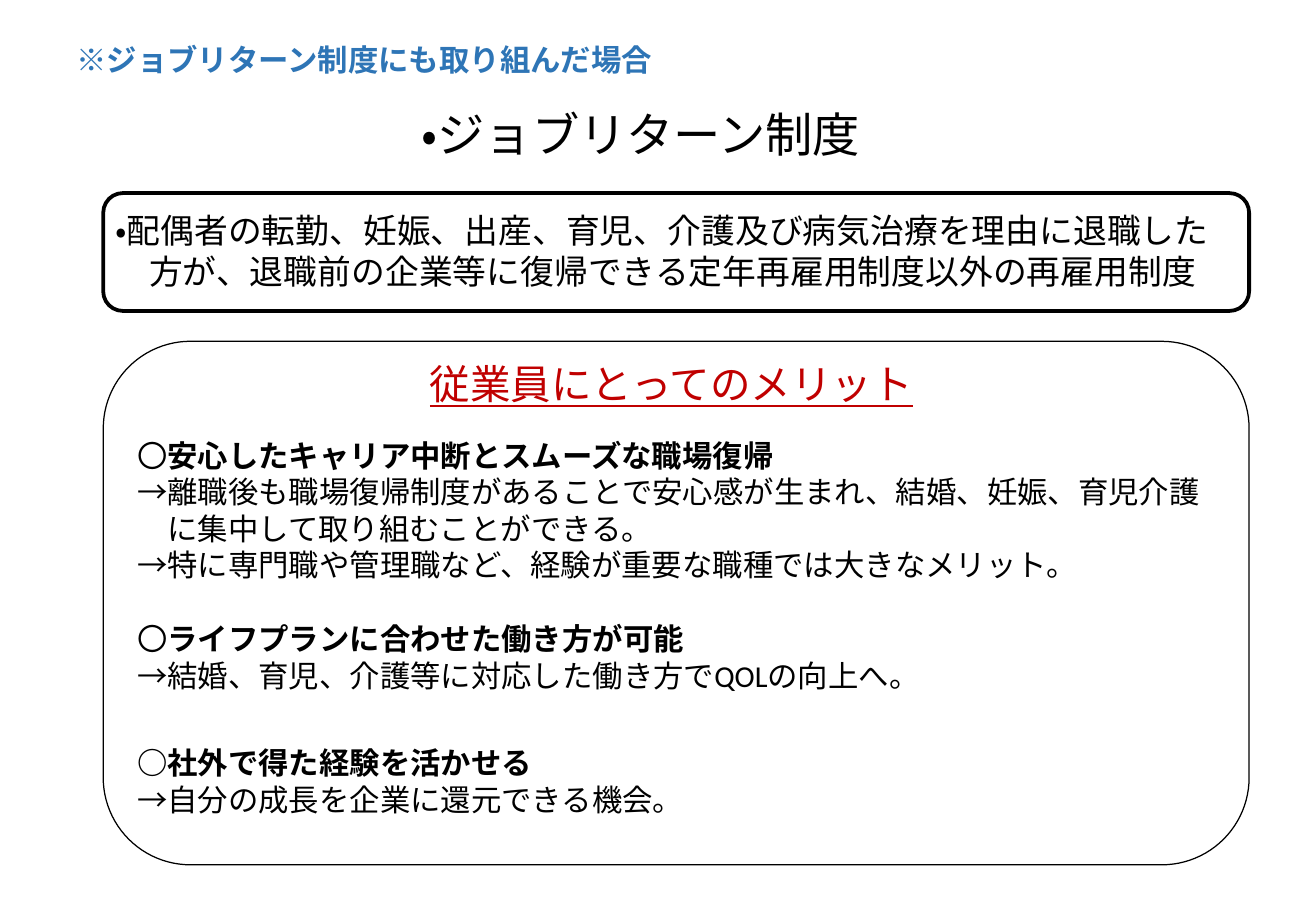
from pptx import Presentation
from pptx import util as u
from pptx.dml.color import RGBColor
from pptx.enum import lang, shapes, text

deck = Presentation()
deck.slide_width, deck.slide_height = u.Inches(10.83), u.Inches(7.5)
page = deck.slides.add_slide(deck.slide_layouts[5])


def rgb(code):
    return RGBColor.from_string(code)


def write(box, place, lines, size, color="000000", under=False):
    """Each line is (indent in inches, [(words, bold), ...])."""
    box.left, box.top, box.width, box.height = map(u.Inches, place)
    frame = box.text_frame
    frame.word_wrap = True
    frame.auto_size = text.MSO_AUTO_SIZE.NONE
    frame.vertical_anchor = text.MSO_ANCHOR.TOP
    for i, (indent, runs) in enumerate(lines):
        para = frame.add_paragraph() if i else frame.paragraphs[0]
        para.alignment = text.PP_ALIGN.LEFT
        if indent:
            para._p.get_or_add_pPr().set("marL", str(u.Inches(indent)))
        for words, bold in runs:
            run = para.add_run()
            run.text = words
            font = run.font
            font.name, font.size, font.bold = "Calibri", u.Pt(size), bold
            font.underline = under
            font.color.rgb = rgb(color)
            font.language_id = lang.MSO_LANGUAGE_ID.JAPANESE


# Title
write(page.shapes.title, (3.37, 0.82, 4.2, 0.57),
      [(0, [("・ジョブリターン制度", False)])], 28)

# Frames around the definition and the merits
for top, height, weight in [(1.59, 0.97, 2.25), (2.81, 4.31, 0.75)]:
    frame = page.shapes.add_shape(
        shapes.MSO_SHAPE.ROUNDED_RECTANGLE,
        u.Inches(0.85), u.Inches(top), u.Inches(9.43), u.Inches(height))
    frame.shadow.inherit = False
    frame.fill.background()
    frame.line.color.rgb = rgb("000000")
    frame.line.width = u.Pt(weight)

# Note, definition, merit heading and the three merits
notes = [
    ((0.53, 0.29, 5.06, 0.4), 18, "2E75B6", False, [
        (0, [("※ジョブリターン制度にも取り組んだ場合", True)])]),
    ((0.85, 1.68, 9.43, 0.77), 20, "000000", False, [
        (0, [("・配偶者の転勤、妊娠、出産、育児、介護及び病気治療を理由に退職した", False)]),
        (0.28, [("方が、退職前の企業等に復帰できる定年再雇用制度以外の再雇用制度", False)])]),
    ((3.44, 2.91, 4.24, 0.5), 24, "C00000", True, [
        (0, [("従業員にとってのメリット", False)])]),
    ((1.03, 3.55, 9, 1.31), 18, "000000", False, [
        (0, [("〇", False), ("安心したキャリア中断とスムーズな職場復帰", True)]),
        (0, [("→離職後も職場復帰制度があることで安心感が生まれ、結婚、妊娠、育児介護", False)]),
        (0.25, [("に集中して取り組むことができる。", False)]),
        (0, [("→特に専門職や管理職など、経験が重要な職種では大きなメリット。", False)])]),
    ((1.03, 5.06, 9, 0.71), 18, "000000", False, [
        (0, [("〇", False), ("ライフプランに合わせた働き方が可能", True)]),
        (0, [("→結婚、育児、介護等に対応した働き方でQOLの向上へ。", False)])]),
    ((1.03, 6.08, 9, 0.71), 18, "000000", False, [
        (0, [("○社外で得た経験を活かせる", True)]),
        (0, [("→自分の成長を企業に還元できる機会。", False)])]),
]
for place, size, color, under, lines in notes:
    box = page.shapes.add_textbox(0, 0, 0, 0)
    write(box, place, lines, size, color, under)

deck.save("out.pptx")
